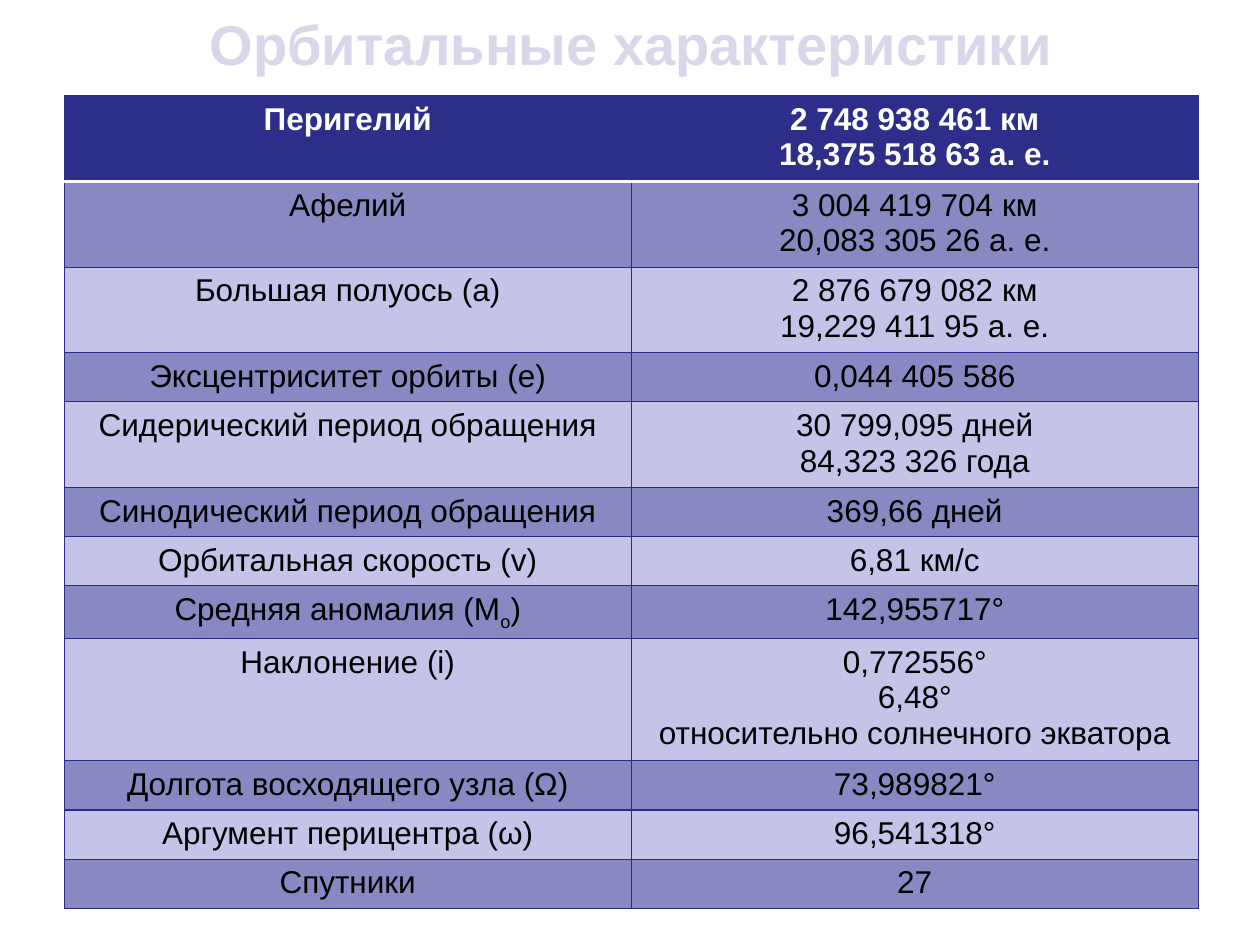
"""Build a slide with a table of orbital characteristics."""
from dataclasses import dataclass

from lxml import etree
from pptx import Presentation
from pptx.dml.color import RGBColor
from pptx.enum.text import MSO_ANCHOR, PP_ALIGN
from pptx.oxml.ns import qn
from pptx.util import Inches, Pt

CENTER = PP_ALIGN.CENTER
MIDDLE = MSO_ANCHOR.MIDDLE


@dataclass(frozen=True)
class Theme:
    """Colours, font and sizes of the slide."""
    font: str = "Arial"
    title_size: float = 32
    cell_size: float = 18
    title: str = "D8D8EA"
    header: str = "2D2D8A"
    dark_band: str = "8888C2"
    light_band: str = "C5C4E8"
    border: str = "2A2A89"
    white: str = "FFFFFF"
    black: str = "000000"
    border_width: float = 0.75
    header_rule: float = 2


@dataclass(frozen=True)
class Row:
    """One characteristic; a part between bars is a subscript."""
    label: str
    value: str

    @property
    def height(self) -> float:
        """Return the row height in inches from its number of lines."""
        return 0.1 + 0.29 * len(self.value.split("\n"))


THEME = Theme()
LEFT, WIDTH = 0.51, 9
TABLE_TOP = 0.76
ROWS = [
    Row("Перигелий", "2 748 938 461 км\n18,375 518 63 а. е."),
    Row("Афелий", "3 004 419 704 км\n20,083 305 26 а. е."),
    Row("Большая полуось (a)", "2 876 679 082 км\n19,229 411 95 а. е."),
    Row("Эксцентриситет орбиты (e)", "0,044 405 586"),
    Row("Сидерический период обращения", "30 799,095 дней\n84,323 326 года"),
    Row("Синодический период обращения", "369,66 дней"),
    Row("Орбитальная скорость (v)", "6,81 км/с"),
    Row("Средняя аномалия (M|o|)", "142,955717°"),
    Row("Наклонение (i)", "0,772556°\n6,48°\nотносительно солнечного экватора"),
    Row("Долгота восходящего узла (Ω)", "73,989821°"),
    Row("Аргумент перицентра (ω)", "96,541318°"),
    Row("Спутники", "27"),
]


def write_text(tf, text: str, *, size: float, color: str, bold: bool = False) -> None:
    """Write centred text with line breaks and subscripts into a text frame."""
    p = tf.paragraphs[0]
    p.alignment = CENTER
    for line_no, line in enumerate(text.split("\n")):
        if line_no:
            p.add_line_break()
        for part_no, part in enumerate(line.split("|")):
            r = p.add_run()
            r.text = part
            r.font.name = THEME.font
            r.font.size = Pt(size)
            r.font.bold = bold
            r.font.color.rgb = RGBColor.from_string(color)
            if part_no % 2:
                r._r.get_or_add_rPr().set("baseline", "-25000")


def set_border(cell, side: str, color: str, width: float) -> None:
    """Add a solid line to one side of a cell."""
    tcPr = cell._tc.get_or_add_tcPr()
    ln = etree.SubElement(tcPr, qn(f"a:ln{side}"), w=str(Pt(width)))
    fill = etree.SubElement(ln, qn("a:solidFill"))
    etree.SubElement(fill, qn("a:srgbClr"), val=color)


def draw_cell(cell, text: str, row_no: int) -> None:
    """Format one cell by its row number and write its text."""
    is_header = row_no == 0
    rule_sides = {0: "B", 1: "T"}
    for side in "LRTB":
        if rule_sides.get(row_no) == side:
            set_border(cell, side, THEME.white, THEME.header_rule)
        else:
            set_border(cell, side, THEME.border, THEME.border_width)
    band = THEME.dark_band if row_no % 2 else THEME.light_band
    cell.fill.solid()
    cell.fill.fore_color.rgb = RGBColor.from_string(THEME.header if is_header else band)
    write_text(cell.text_frame, text, size=THEME.cell_size, bold=is_header,
               color=THEME.white if is_header else THEME.black)


def draw_table(s, rows: list[Row]) -> None:
    """Draw the two-column table of characteristics."""
    height = sum(row.height for row in rows)
    table = s.shapes.add_table(len(rows), 2, Inches(LEFT), Inches(TABLE_TOP),
                               Inches(WIDTH), Inches(height)).table
    for row_no, row in enumerate(rows):
        table.rows[row_no].height = Inches(row.height)
        for col_no, text in enumerate((row.label, row.value)):
            draw_cell(table.cell(row_no, col_no), text, row_no)


def draw_title(s, text: str) -> None:
    """Place and format the slide title."""
    sp = s.shapes.title
    sp.left, sp.top = Inches(LEFT), Inches(0)
    sp.width, sp.height = Inches(WIDTH), Inches(0.69)
    sp.text_frame.vertical_anchor = MIDDLE
    write_text(sp.text_frame, text, size=THEME.title_size, color=THEME.title, bold=True)


def main() -> None:
    """Build and save the presentation."""
    prs = Presentation()
    prs.slide_width, prs.slide_height = Inches(10), Inches(7.5)
    s = prs.slides.add_slide(prs.slide_layouts[5])
    draw_title(s, "Орбитальные характеристики")
    draw_table(s, ROWS)
    prs.save("out.pptx")


if __name__ == "__main__":
    main()
